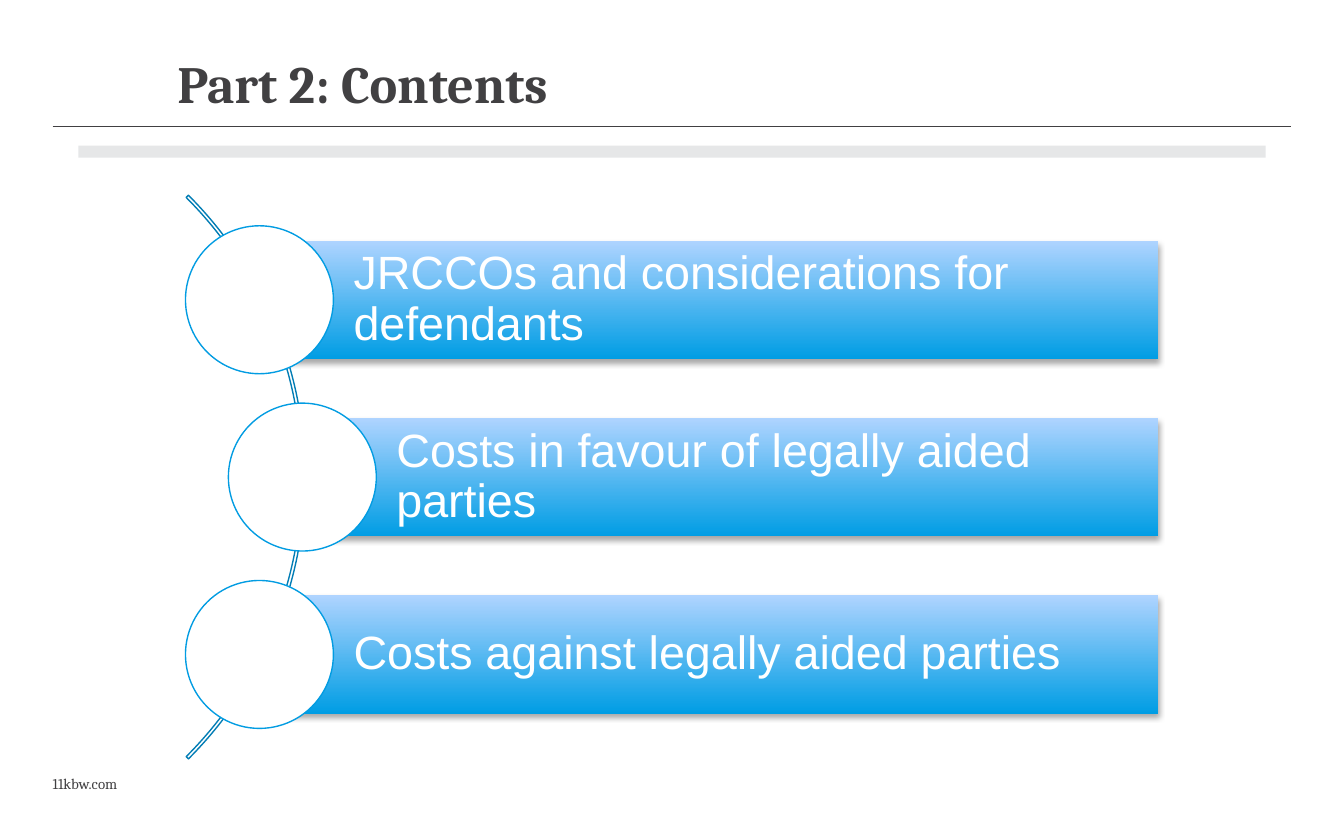
from dataclasses import dataclass

from lxml import etree
from pptx import Presentation
from pptx import util as u
from pptx.dml.color import RGBColor
from pptx.enum import shapes, text
from pptx.oxml import ns


@dataclass(frozen=True)
class Theme:
    ink: str = "414042"
    band: str = "E6E7E8"
    arc: str = "027DB5"
    outline: str = "029CE2"
    bar_bottom: str = "009DE4"
    bar_top: str = "AFD4FF"
    white: str = "FFFFFF"
    shadow: str = "000000"
    serif: str = "Cambria"
    sans: str = "Arial"
    title_size: float = 28
    item_size: float = 25
    footer_size: float = 8
    line_width: float = 0.75


@dataclass(frozen=True)
class Box:
    left: float
    top: float
    width: float
    height: float

    def lengths(self) -> tuple:
        return tuple(u.Pt(v) for v in (self.left, self.top, self.width, self.height))


@dataclass(frozen=True)
class Item:
    label: str
    center_x: float


THEME = Theme()
ITEMS = (
    Item("JRCCOs and considerations for defendants", 139),
    Item("Costs in favour of legally aided parties", 162),
    Item("Costs against legally aided parties", 139),
)
FIRST_CENTER_Y = 160.6
ITEM_STEP = 95
BAR_HEIGHT = 63.4
BAR_RIGHT = 620.6
NODE_SIZE = BAR_HEIGHT * 1.25
ARC_SIZE = 427
ARC_LEFT = -263.5


def color(value: str) -> RGBColor:
    return RGBColor.from_string(value)


def write_text(shape, content: str, *, font: str, size: float, ink: str,
               bold: bool = False, anchor=text.MSO_ANCHOR.TOP,
               insets: tuple = (0, 0, 0, 0), spacing: float = 1.0) -> None:
    frame = shape.text_frame
    frame.word_wrap = True
    frame.auto_size = text.MSO_AUTO_SIZE.NONE
    frame.vertical_anchor = anchor
    (frame.margin_left, frame.margin_top,
     frame.margin_right, frame.margin_bottom) = (u.Pt(v) for v in insets)
    paragraph = frame.paragraphs[0]
    paragraph.alignment = text.PP_ALIGN.LEFT
    paragraph.line_spacing = spacing
    paragraph.space_before = u.Pt(0)
    run = paragraph.add_run()
    run.text = content
    run.font.name = font
    run.font.size = u.Pt(size)
    run.font.bold = bold
    run.font.color.rgb = color(ink)


def add_shape(slide, kind, box: Box, fill: str | None = None, line: str | None = None):
    shape = slide.shapes.add_shape(kind, *box.lengths())
    shape.shadow.inherit = False
    if fill:
        shape.fill.solid()
        shape.fill.fore_color.rgb = color(fill)
    else:
        shape.fill.background()
    if line:
        shape.line.color.rgb = color(line)
        shape.line.width = u.Pt(THEME.line_width)
    else:
        shape.line.fill.background()
    return shape


def add_drop_shadow(shape) -> None:
    effects = shape._element.spPr.find(ns.qn("a:effectLst"))
    outer = etree.SubElement(effects, ns.qn("a:outerShdw"), blurRad=str(u.Pt(3.1)),
                             dist=str(u.Pt(1.8)), dir="5400000", rotWithShape="0")
    tint = etree.SubElement(outer, ns.qn("a:srgbClr"), val=THEME.shadow)
    etree.SubElement(tint, ns.qn("a:alpha"), val="35000")


def add_rule(slide, left: float, right: float, y: float) -> None:
    rule = slide.shapes.add_connector(shapes.MSO_CONNECTOR.STRAIGHT,
                                      u.Pt(left), u.Pt(y), u.Pt(right), u.Pt(y))
    rule.line.color.rgb = color(THEME.ink)
    rule.line.width = u.Pt(THEME.line_width)
    etree.SubElement(rule._element.spPr, ns.qn("a:effectLst"))


def add_item(slide, item: Item, center_y: float) -> None:
    # Gradient bar with its label
    bar = add_shape(slide, shapes.MSO_SHAPE.RECTANGLE,
                    Box(item.center_x, center_y - BAR_HEIGHT / 2,
                        BAR_RIGHT - item.center_x, BAR_HEIGHT))
    bar.fill.gradient()
    bar.fill.gradient_angle = 90
    for stop, value in zip(bar.fill.gradient_stops, (THEME.bar_bottom, THEME.bar_top)):
        stop.color.rgb = color(value)
    add_drop_shadow(bar)
    write_text(bar, item.label, font=THEME.sans, size=THEME.item_size, ink=THEME.white,
               anchor=text.MSO_ANCHOR.MIDDLE, insets=(50.4, 5, 5, 5), spacing=0.9)
    # Round node over the bar's left end
    add_shape(slide, shapes.MSO_SHAPE.OVAL,
              Box(item.center_x - NODE_SIZE / 2, center_y - NODE_SIZE / 2,
                  NODE_SIZE, NODE_SIZE), THEME.white, THEME.outline)


def main() -> None:
    presentation = Presentation()
    presentation.slide_width, presentation.slide_height = u.Pt(720), u.Pt(450)
    slide = presentation.slides.add_slide(presentation.slide_layouts[5])

    # Header
    add_rule(slide, 28.2, 691.8, 67.7)
    add_shape(slide, shapes.MSO_SHAPE.RECTANGLE, Box(42, 78.1, 636, 6.4), THEME.band)
    title = slide.shapes.title
    title.left, title.top, title.width, title.height = Box(95, 27.4, 530, 31).lengths()
    write_text(title, "Part 2: Contents", font=THEME.serif, size=THEME.title_size,
               ink=THEME.ink, bold=True)

    # Arc behind the items, centred on the middle one
    middle_y = FIRST_CENTER_Y + ITEM_STEP * (len(ITEMS) - 1) / 2
    arc = add_shape(slide, shapes.MSO_SHAPE.BLOCK_ARC,
                    Box(ARC_LEFT, middle_y - ARC_SIZE / 2, ARC_SIZE, ARC_SIZE),
                    line=THEME.arc)
    for index, value in enumerate((189, 27, 0.004)):
        arc.adjustments[index] = value

    # Contents
    for index, item in enumerate(ITEMS):
        add_item(slide, item, FIRST_CENTER_Y + index * ITEM_STEP)

    # Footer
    footer = slide.shapes.add_textbox(*Box(28.2, 414.7, 317.5, 10).lengths())
    write_text(footer, "11kbw.com", font=THEME.serif, size=THEME.footer_size, ink=THEME.ink)

    presentation.save("out.pptx")


if __name__ == "__main__":
    main()
